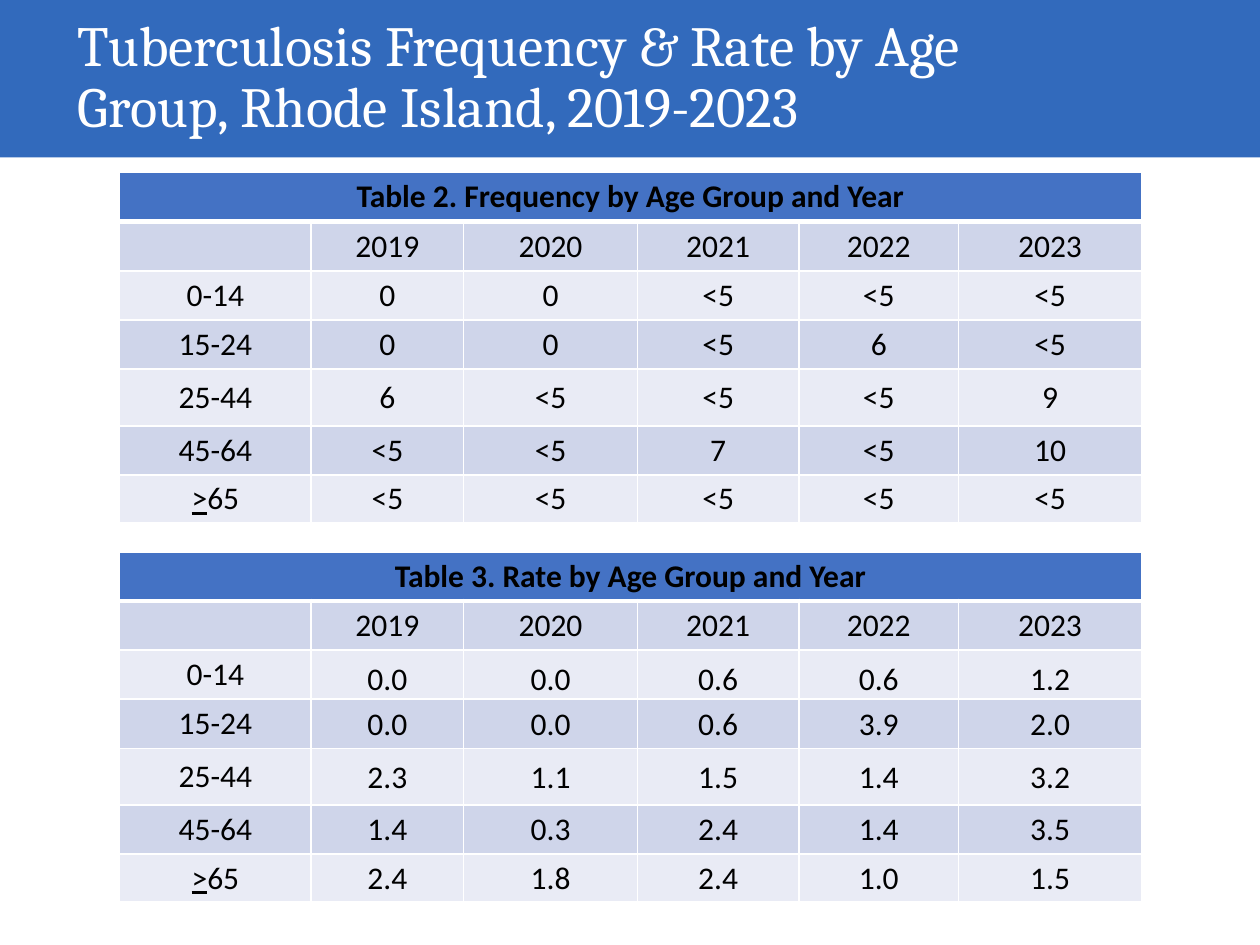
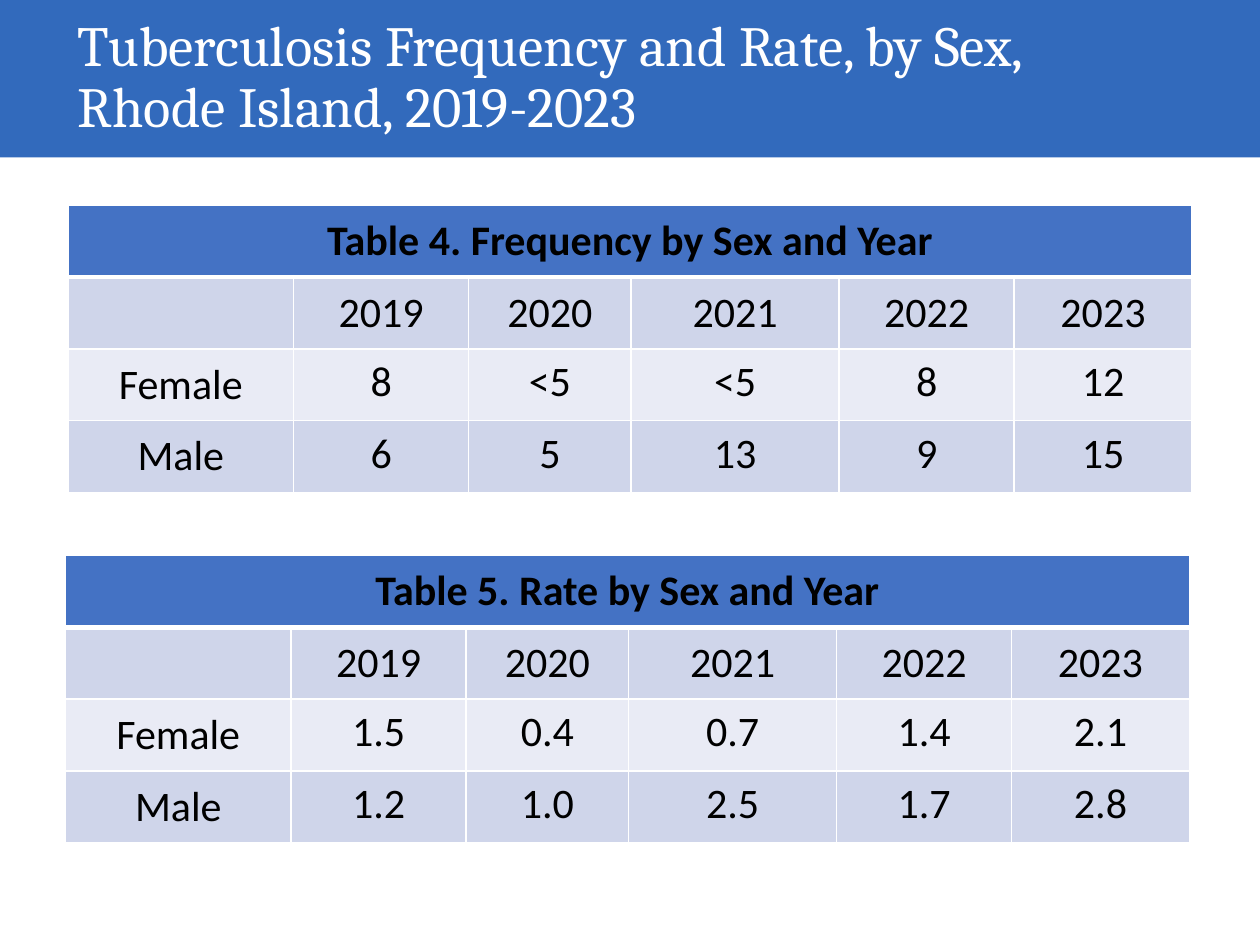
from lxml import etree
from pptx import Presentation
from pptx.dml.color import RGBColor
from pptx.enum import shapes, text
from pptx.oxml import ns
from pptx.util import Inches, Pt

BAND_BLUE = RGBColor(0x32, 0x6A, 0xBC)
HEADER_BLUE = RGBColor(0x44, 0x72, 0xC4)
ROW_DARK = RGBColor(0xCF, 0xD5, 0xEA)
ROW_LIGHT = RGBColor(0xE9, 0xEB, 0xF5)
WHITE = RGBColor(0xFF, 0xFF, 0xFF)
BLACK = RGBColor(0x00, 0x00, 0x00)

MIDDLE = text.MSO_ANCHOR.MIDDLE
BOTTOM = text.MSO_ANCHOR.BOTTOM
LABEL_MARGINS = (0.07, 0.04, 0.07, 0.04)
YEARS = ["", "2019", "2020", "2021", "2022", "2023"]

AGE_STYLE = dict(size=18, columns=[1.52, 1.21, 1.38, 1.28, 1.27, 1.45],
                 heights=[0.39, 0.39, 0.39, 0.39, 0.45, 0.39, 0.38])
SEX_STYLE = dict(size=24, columns=[1.79, 1.39, 1.29, 1.65, 1.39, 1.41],
                 heights=[0.57] * 4, value_margins=(0.01, 0.01, 0.01, 0.05))

SLIDES = [
    ("Tuberculosis Frequency & Rate by Age Group, Rhode Island, 2019-2023", [
        dict(AGE_STYLE, left=0.95, top=1.37,
             caption="Table 2. Frequency by Age Group and Year",
             rows=[
                 ["0-14", "0", "0", "<5", "<5", "<5"],
                 ["15-24", "0", "0", "<5", "6", "<5"],
                 ["25-44", "6", "<5", "<5", "<5", "9"],
                 ["45-64", "<5", "<5", "7", "<5", "10"],
                 [">65", "<5", "<5", "<5", "<5", "<5"],
             ]),
        dict(AGE_STYLE, left=0.95, top=4.38,
             caption="Table 3. Rate by Age Group and Year",
             value_margins=(0.01, 0.01, 0.01, 0), first_anchor=BOTTOM,
             rows=[
                 ["0-14", "0.0", "0.0", "0.6", "0.6", "1.2"],
                 ["15-24", "0.0", "0.0", "0.6", "3.9", "2.0"],
                 ["25-44", "2.3", "1.1", "1.5", "1.4", "3.2"],
                 ["45-64", "1.4", "0.3", "2.4", "1.4", "3.5"],
                 [">65", "2.4", "1.8", "2.4", "1.0", "1.5"],
             ]),
    ]),
    ("Tuberculosis Frequency and Rate, by Sex, Rhode Island, 2019-2023", [
        dict(SEX_STYLE, left=0.54, top=1.63,
             caption="Table 4. Frequency by Sex and Year",
             rows=[
                 ["Female", "8", "<5", "<5", "8", "12"],
                 ["Male", "6", "5", "13", "9", "15"],
             ]),
        dict(SEX_STYLE, left=0.52, top=4.41,
             caption="Table 5. Rate by Sex and Year",
             rows=[
                 ["Female", "1.5", "0.4", "0.7", "1.4", "2.1"],
                 ["Male", "1.2", "1.0", "2.5", "1.7", "2.8"],
             ]),
    ]),
]


def write(frame, content, size, font="Calibri", color=BLACK, bold=False,
          align=text.PP_ALIGN.CENTER, spacing=1.0):
    """Fill a text frame; a leading > is underlined to read as "or more"."""
    paragraph = frame.paragraphs[0]
    paragraph.alignment = align
    paragraph.line_spacing = spacing
    paragraph.font.size = Pt(size)
    parts = [">", content[1:]] if content.startswith(">") else [content]
    for part in parts:
        run = paragraph.add_run()
        run.text = part
        run.font.size = Pt(size)
        run.font.name = font
        run.font.color.rgb = color
        run.font.bold = bold
        run.font.underline = part == ">"


def add_title(slide, title):
    band = slide.shapes.add_shape(shapes.MSO_SHAPE.RECTANGLE, 0, 0,
                                  Inches(10), Inches(1.25))
    band.shadow.inherit = False
    band.fill.solid()
    band.fill.fore_color.rgb = BAND_BLUE
    band.line.fill.background()
    box = slide.shapes.add_textbox(Inches(0.52), Inches(0.11), Inches(8), Inches(1.03))
    box.text_frame.word_wrap = True
    box.text_frame.vertical_anchor = MIDDLE
    write(box.text_frame, title, 32.4, font="Cambria", color=WHITE,
          align=text.PP_ALIGN.LEFT, spacing=0.9)


def style_cell(cell, fill, margins, anchor=MIDDLE, top=1, bottom=1):
    """Set fill, margins and white borders; top and bottom are line widths in points."""
    cell.fill.solid()
    cell.fill.fore_color.rgb = fill
    cell.vertical_anchor = anchor
    (cell.margin_left, cell.margin_top,
     cell.margin_right, cell.margin_bottom) = map(Inches, margins)
    properties = cell._tc.get_or_add_tcPr()
    widths = {"lnL": 1, "lnR": 1, "lnT": top, "lnB": bottom}
    for index, (side, width) in enumerate(widths.items()):
        line = etree.Element(ns.qn(f"a:{side}"), w=str(Pt(width)))
        solid = etree.SubElement(line, ns.qn("a:solidFill"))
        etree.SubElement(solid, ns.qn("a:srgbClr"), val=str(WHITE))
        properties.insert(index, line)


def add_data_table(slide, left, top, caption, rows, size, columns, heights,
                   value_margins=LABEL_MARGINS, first_anchor=MIDDLE):
    frame = slide.shapes.add_table(len(heights), len(columns), Inches(left), Inches(top),
                                   Inches(sum(columns)), Inches(sum(heights)))
    table = frame.table
    for column, width in zip(table.columns, columns):
        column.width = Inches(width)
    for row, height in zip(table.rows, heights):
        row.height = Inches(height)

    for cell in table.rows[0].cells:
        style_cell(cell, HEADER_BLUE, LABEL_MARGINS, bottom=3)
    table.cell(0, 0).merge(table.cell(0, len(columns) - 1))
    write(table.cell(0, 0).text_frame, caption, size, bold=True)

    for r, values in enumerate([YEARS] + rows, start=1):
        for c, value in enumerate(values):
            is_value = r > 1 and c > 0
            cell = table.cell(r, c)
            style_cell(cell, ROW_DARK if r % 2 else ROW_LIGHT,
                       value_margins if is_value else LABEL_MARGINS,
                       anchor=first_anchor if is_value and r == 2 else MIDDLE,
                       top=3 if r == 1 else 1)
            if value:
                write(cell.text_frame, value, size)


def main():
    presentation = Presentation()
    presentation.slide_width = Inches(10)
    presentation.slide_height = Inches(7.5)
    for title, tables in SLIDES:
        slide = presentation.slides.add_slide(presentation.slide_layouts[6])
        add_title(slide, title)
        for table in tables:
            add_data_table(slide, **table)
    presentation.save("out.pptx")


if __name__ == "__main__":
    main()
